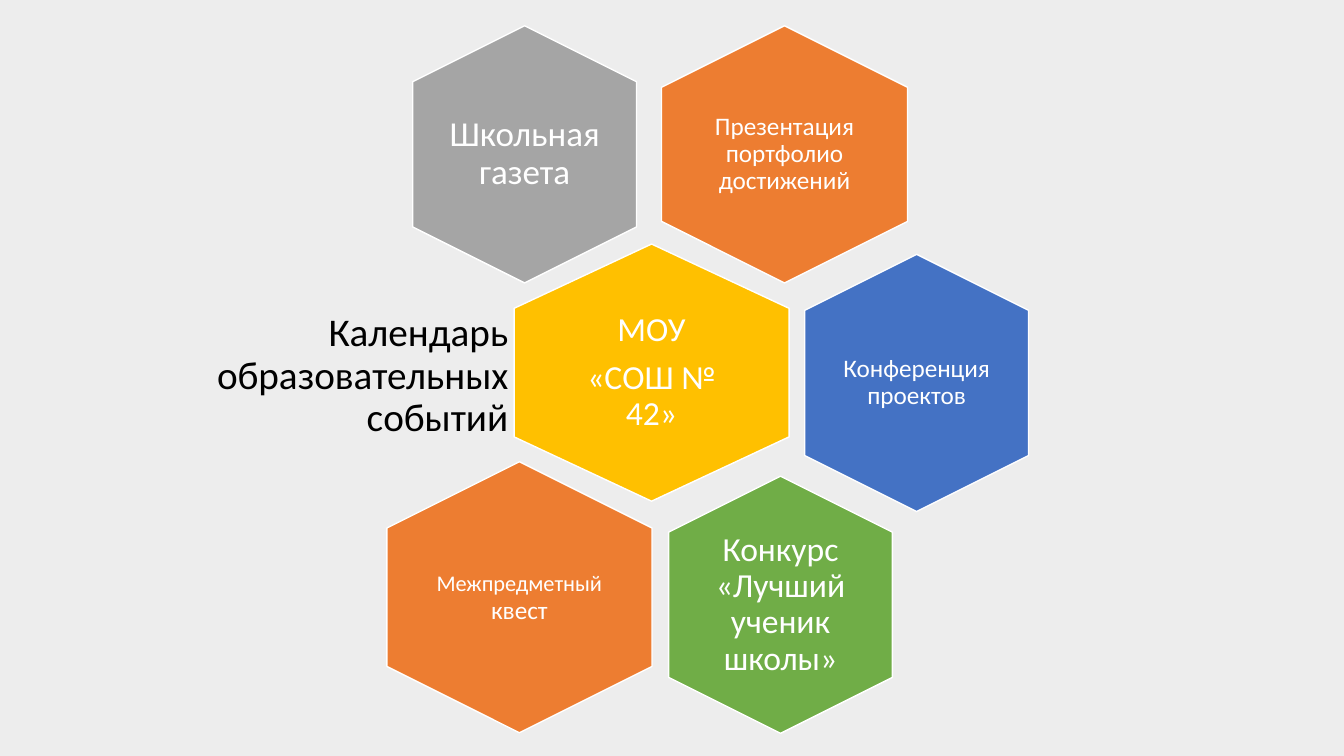
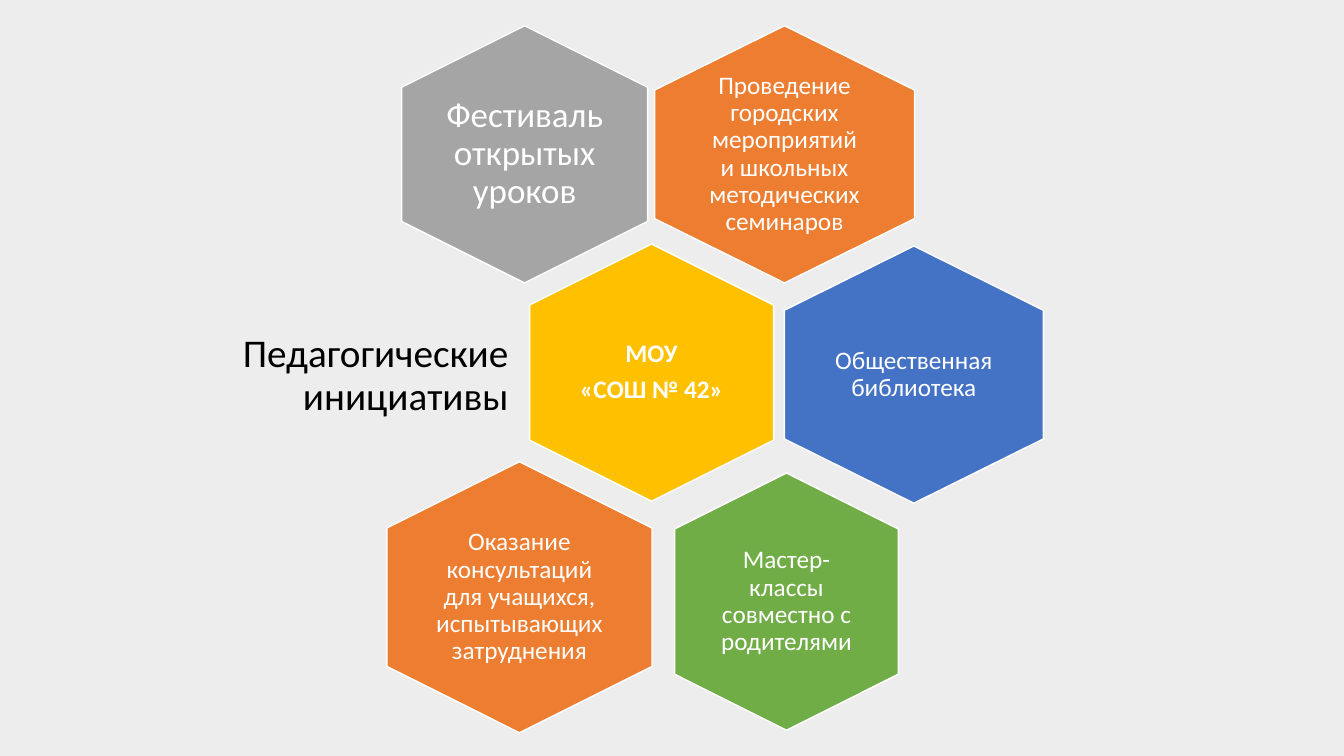
from pptx import Presentation
from pptx.dml.color import RGBColor
from pptx.enum.shapes import MSO_SHAPE
from pptx.enum.text import MSO_ANCHOR, MSO_AUTO_SIZE, PP_ALIGN
from pptx.util import Cm, Pt

HEXAGON = MSO_SHAPE.HEXAGON
MIDDLE = MSO_ANCHOR.MIDDLE
NO_FIT = MSO_AUTO_SIZE.NONE
CENTER, RIGHT = PP_ALIGN.CENTER, PP_ALIGN.RIGHT

BACKGROUND = RGBColor(0xED, 0xED, 0xED)
ORANGE = RGBColor(0xED, 0x7D, 0x31)
GREY = RGBColor(0xA5, 0xA5, 0xA5)
GOLD = RGBColor(0xFF, 0xC0, 0x00)
BLUE = RGBColor(0x44, 0x72, 0xC4)
GREEN = RGBColor(0x70, 0xAD, 0x47)
WHITE = RGBColor(0xFF, 0xFF, 0xFF)
BLACK = RGBColor(0x00, 0x00, 0x00)

FONT = "Calibri"
TITLE_SIZE = 28
TITLE_INSET = 0.3
CELL_HEIGHT = 6.48
TALL_HEIGHT = 6.83

# Cell: fill, centre x, centre y, width, height (cm), text inset (cm), paragraphs
# Paragraph: list of (text, size, bold) runs
SLIDES = [
    ("Календарь образовательных событий", [
        (ORANGE, 19.77, 3.89, 6.2, CELL_HEIGHT, 0.18,
         [[("Презентация портфолио достижений", 18, False)]]),
        (GREY, 13.22, 3.89, 5.64, CELL_HEIGHT, 0,
         [[("Школьная газета", 25, False)]]),
        (GOLD, 16.42, 9.39, 6.93, CELL_HEIGHT, 0.25,
         [[("МОУ", 24, False)], [("«СОШ № 42»", 24, False)]]),
        (BLUE, 23.1, 9.65, 5.64, CELL_HEIGHT, 0,
         [[("Конференция проектов", 18, False)]]),
        (GREEN, 19.67, 15.24, 5.64, CELL_HEIGHT, 0.25,
         [[("Конкурс «Лучший ученик школы»", 24, False)]]),
        (ORANGE, 13.09, 15.05, 6.68, TALL_HEIGHT, 0,
         [[("Межпредметный", 16, False), (" квест", 18, False)]]),
    ]),
    ("Педагогические инициативы", [
        (ORANGE, 19.77, 3.89, 6.55, CELL_HEIGHT, 0.18,
         [[("Проведение городских мероприятий и школьных "
            "методических семинаров", 18, False)]]),
        (GREY, 13.22, 3.89, 6.2, CELL_HEIGHT, 0,
         [[("Фестиваль открытых уроков", 25, False)]]),
        (GOLD, 16.42, 9.39, 6.15, CELL_HEIGHT, 0.18,
         [[("МОУ", 18, True)], [("«СОШ № 42»", 18, True)]]),
        (BLUE, 23.03, 9.44, 6.53, CELL_HEIGHT, 0,
         [[("Общественная библиотека", 18, False)]]),
        (GREEN, 19.82, 15.16, 5.64, CELL_HEIGHT, 0.18,
         [[("Мастер-классы совместно с родителями", 18, False)]]),
        (ORANGE, 13.09, 15.05, 6.68, TALL_HEIGHT, 0,
         [[("Оказание консультаций для учащихся, "
            "испытывающих затруднения", 18, False)]]),
    ]),
]


def centred(x, y, width, height):
    return Cm(x - width / 2), Cm(y - height / 2), Cm(width), Cm(height)


def write(box, paragraphs, align, color, inset):
    frame = box.text_frame
    frame.word_wrap = True
    frame.auto_size = NO_FIT
    frame.vertical_anchor = MIDDLE
    frame.margin_left = frame.margin_right = Cm(inset)
    frame.margin_top = frame.margin_bottom = Cm(inset)
    for index, runs in enumerate(paragraphs):
        para = frame.add_paragraph() if index else frame.paragraphs[0]
        para.alignment = align
        para.line_spacing = 0.9
        para.space_after = Pt(0.35 * runs[-1][1])
        for text, size, bold in runs:
            span = para.add_run()
            span.text = text
            span.font.name = FONT
            span.font.size = Pt(size)
            span.font.bold = bold
            span.font.color.rgb = color


def add_cell(page, fill, x, y, width, height, inset, paragraphs):
    # The preset points sideways, so it is turned to stand on its tip
    cell = page.shapes.add_shape(HEXAGON, *centred(x, y, height, width))
    cell.rotation = 90
    cell.adjustments[0] = 0.25
    cell.shadow.inherit = False
    cell.fill.solid()
    cell.fill.fore_color.rgb = fill
    cell.line.color.rgb = WHITE
    cell.line.width = Pt(1)
    # Upright label inside the sloping sides
    label_width, label_height = 0.69 + 0.565 * width, 0.68 * height
    label = page.shapes.add_textbox(*centred(x, y, label_width, label_height))
    write(label, paragraphs, CENTER, WHITE, inset)


def add_page(deck, heading, cells):
    page = deck.slides.add_slide(deck.slide_layouts.get_by_name("Title Only"))
    title = page.shapes.title
    title.left, title.top = Cm(2.11), Cm(7.54)
    title.width, title.height = Cm(11), Cm(3.89)
    write(title, [[(heading, TITLE_SIZE, False)]], RIGHT, BLACK, TITLE_INSET)
    for cell in cells:
        add_cell(page, *cell)


def main():
    deck = Presentation()
    deck.slide_width, deck.slide_height = Cm(33.87), Cm(19.05)
    backdrop = deck.slide_master.background.fill
    backdrop.solid()
    backdrop.fore_color.rgb = BACKGROUND
    for heading, cells in SLIDES:
        add_page(deck, heading, cells)
    deck.save("out.pptx")


if __name__ == "__main__":
    main()
